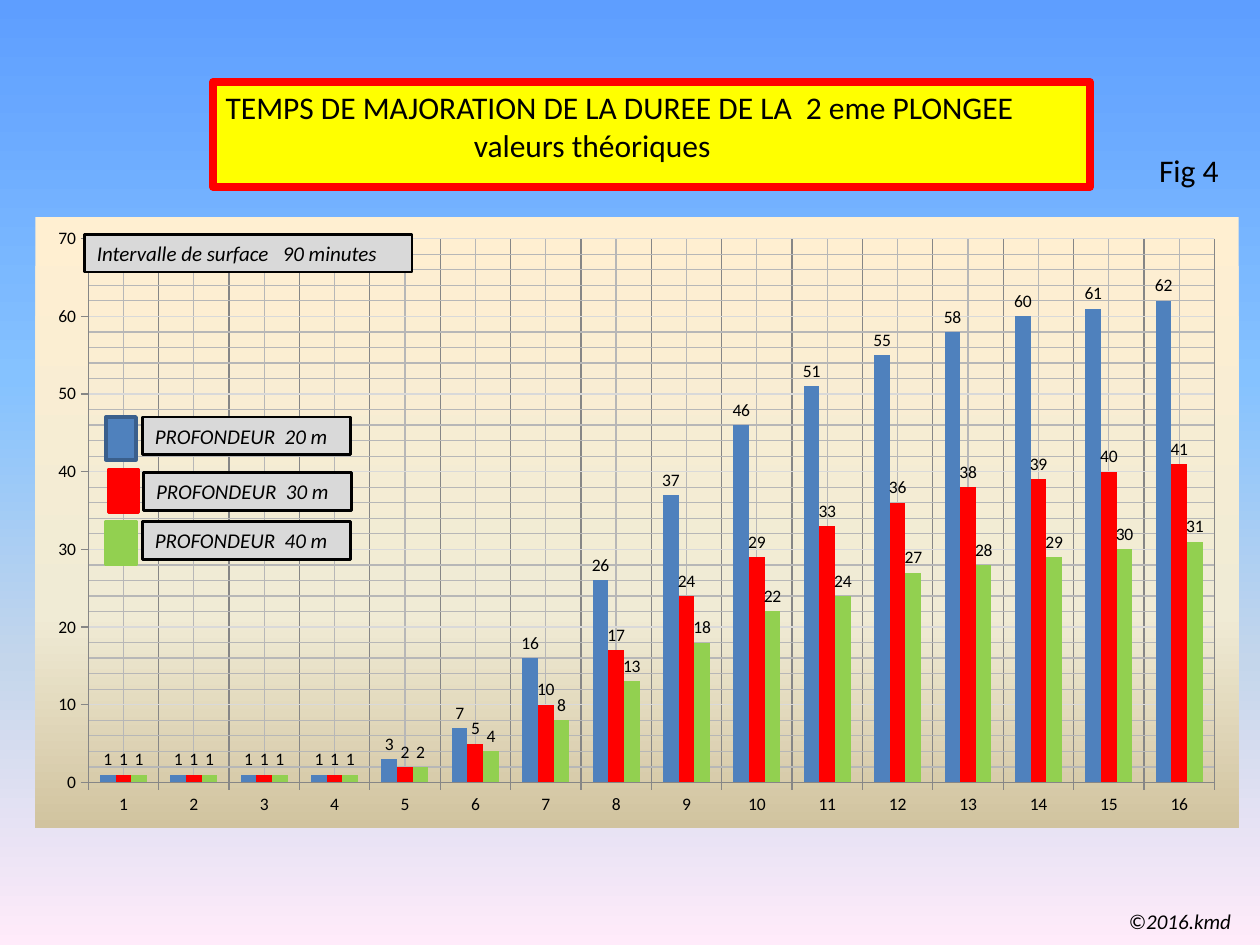
from dataclasses import dataclass

from lxml import etree
from pptx import Presentation
from pptx.chart.data import CategoryChartData
from pptx.dml.color import RGBColor
from pptx.enum import chart as chart_enum, shapes, text
from pptx.oxml import parse_xml
from pptx.oxml.ns import nsdecls, qn
from pptx.util import Inches, Pt


@dataclass(frozen=True)
class Theme:
    font: str = "Calibri"
    black: str = "000000"
    red: str = "FF0000"
    yellow: str = "FFFF00"
    label_fill: str = "D9D9D9"
    axis: str = "868686"
    minor_grid: str = "B7B7B7"
    background: tuple = ((0, "5E9EFF"), (40, "85C2FF"), (70, "C4D6EB"), (100, "FFEBFA"))
    chart_area: tuple = ((0, "FFEFD1"), (65, "F0EBD5"), (100, "D1C39F"))
    title_size: int = 18
    label_size: int = 12
    chart_size: int = 10


THEME = Theme()

# Depth in metres, bar colour, key outline, swatch position, label position, minutes
DEPTHS = [
    (20, "4F81BD", "3A5F8C", (0.84, 3.31), (1.13, 3.31),
     (1, 1, 1, 1, 3, 7, 16, 26, 37, 46, 51, 55, 58, 60, 61, 62)),
    (30, "FF0000", "FF0000", (0.86, 3.73), (1.14, 3.75),
     (1, 1, 1, 1, 2, 5, 10, 17, 24, 29, 33, 36, 38, 39, 40, 41)),
    (40, "92D050", "92D050", (0.84, 4.14), (1.13, 4.14),
     (1, 1, 1, 1, 2, 4, 8, 13, 18, 22, 24, 27, 28, 29, 30, 31)),
]


def color(value):
    return RGBColor.from_string(value)


def gradient(stops):
    """Vertical gradient fill element."""
    stop_xml = "".join(
        f'<a:gs pos="{position * 1000}"><a:srgbClr val="{value}"/></a:gs>'
        for position, value in stops)
    return parse_xml(
        f'<a:gradFill {nsdecls("a")} rotWithShape="1"><a:gsLst>{stop_xml}</a:gsLst>'
        '<a:lin ang="5400000" scaled="0"/></a:gradFill>')


def set_line(line, value, width):
    line.color.rgb = color(value)
    line.width = Pt(width)


def paint(shape, fill, line, width):
    shape.shadow.inherit = False
    shape.fill.solid()
    shape.fill.fore_color.rgb = color(fill)
    set_line(shape.line, line, width)


def write(shape, words, size, italic=False, wrap=True):
    frame = shape.text_frame
    frame.text = words
    frame.word_wrap = wrap
    frame.auto_size = text.MSO_AUTO_SIZE.SHAPE_TO_FIT_TEXT
    frame.vertical_anchor = text.MSO_ANCHOR.TOP
    for paragraph in frame.paragraphs:
        paragraph.alignment = text.PP_ALIGN.LEFT
        for run in paragraph.runs:
            run.font.name = THEME.font
            run.font.size = Pt(size)
            run.font.italic = italic
            run.font.color.rgb = color(THEME.black)


def add_box(slide, left, top, width, height, fill, line, line_width):
    shape = slide.shapes.add_shape(
        shapes.MSO_SHAPE.RECTANGLE,
        Inches(left), Inches(top), Inches(width), Inches(height))
    paint(shape, fill, line, line_width)
    return shape


def add_label(slide, left, top, width, words):
    label = add_box(slide, left, top, width, 0.3, THEME.label_fill, THEME.black, 1.5)
    write(label, words, THEME.label_size, italic=True)


def add_text(slide, left, top, width, height, words, size, italic=False, wrap=True):
    box = slide.shapes.add_textbox(
        Inches(left), Inches(top), Inches(width), Inches(height))
    write(box, words, size, italic, wrap)


def set_title(slide):
    title = slide.shapes.title
    title.left, title.top = Inches(1.69), Inches(0.65)
    title.width, title.height = Inches(6.96), Inches(0.71)
    paint(title, THEME.yellow, THEME.red, 4.5)
    write(title, "TEMPS DE MAJORATION DE LA DUREE DE LA  2 eme PLONGEE\nvaleurs théoriques",
          THEME.title_size)
    # The second line is indented under the first
    properties = title.text_frame.paragraphs[1]._p.get_or_add_pPr()
    properties.set("marL", str(Inches(1.97)))
    properties.set("indent", "0")


def format_axis(axis, major_color):
    axis.has_major_gridlines = axis.has_minor_gridlines = True
    set_line(axis.major_gridlines.format.line, major_color, 0.75)
    set_line(axis.format.line, THEME.axis, 0.75)
    axis.major_tick_mark = chart_enum.XL_TICK_MARK.OUTSIDE
    axis.minor_tick_mark = chart_enum.XL_TICK_MARK.NONE


def color_minor_grid(chart):
    for grid in chart.element.findall(".//" + qn("c:minorGridlines")):
        grid.append(parse_xml(
            f'<c:spPr {nsdecls("c", "a")}><a:ln w="{Pt(0.75)}"><a:solidFill>'
            f'<a:srgbClr val="{THEME.minor_grid}"/></a:solidFill></a:ln></c:spPr>'))


def set_plot_area(chart, x, y, width, height):
    """Fix the inner plot area, as fractions of the chart."""
    plot_area = chart.element.find(".//" + qn("c:plotArea"))
    for old in plot_area.findall(qn("c:layout")):
        plot_area.remove(old)
    layout = etree.Element(qn("c:layout"))
    manual = etree.SubElement(layout, qn("c:manualLayout"))
    for tag, value in (("layoutTarget", "inner"), ("xMode", "edge"), ("yMode", "edge"),
                       ("x", x), ("y", y), ("w", width), ("h", height)):
        etree.SubElement(manual, qn("c:" + tag)).set("val", str(value))
    plot_area.insert(0, layout)


def add_depth_chart(slide):
    data = CategoryChartData()
    data.categories = [str(number) for number in range(1, 17)]
    for index, depth in enumerate(DEPTHS, start=1):
        data.add_series(f"Series {index}", depth[-1])
    chart = slide.shapes.add_chart(
        chart_enum.XL_CHART_TYPE.COLUMN_CLUSTERED,
        Inches(0.28), Inches(1.72), Inches(9.55), Inches(4.85), data).chart
    chart.has_title = chart.has_legend = False
    chart.font.name = THEME.font
    chart.font.size = Pt(THEME.chart_size)
    chart.font.color.rgb = color(THEME.black)

    # Axes and grid
    format_axis(chart.category_axis, THEME.axis)
    format_axis(chart.value_axis, THEME.label_fill)
    color_minor_grid(chart)
    chart.value_axis.minimum_scale, chart.value_axis.maximum_scale = 0, 70
    chart.value_axis.major_unit, chart.value_axis.minor_unit = 10, 2

    # Bars and their values
    plot = chart.plots[0]
    plot.vary_by_categories = False
    plot.gap_width, plot.overlap = 150, 0
    for series, depth in zip(plot.series, DEPTHS):
        series.format.fill.solid()
        series.format.fill.fore_color.rgb = color(depth[1])
        series.data_labels.show_value = True
        series.data_labels.position = chart_enum.XL_LABEL_POSITION.OUTSIDE_END

    # Chart area
    set_plot_area(chart, 0.044, 0.036, 0.936, 0.89)
    area = parse_xml(f'<c:spPr {nsdecls("c", "a")}><a:ln><a:noFill/></a:ln></c:spPr>')
    area.insert(0, gradient(THEME.chart_area))
    chart.element.find(qn("c:chart")).addnext(area)


def set_background(slide):
    slide.background.fill.solid()
    solid = slide.element.find(".//" + qn("p:bgPr")).find(qn("a:solidFill"))
    solid.getparent().replace(solid, gradient(THEME.background))


def main():
    presentation = Presentation()
    presentation.slide_width, presentation.slide_height = Inches(10), Inches(7.5)
    slide = presentation.slides.add_slide(presentation.slide_layouts[5])
    set_background(slide)
    set_title(slide)
    add_depth_chart(slide)
    # Colour key
    for metres, fill, line, swatch, label, _ in DEPTHS:
        add_label(slide, *label, 1.65, f"PROFONDEUR  {metres} m")
        add_box(slide, *swatch, 0.24, 0.34, fill, line, 2)
    # Captions
    add_label(slide, 0.67, 1.86, 2.6, "Intervalle de surface   90 minutes")
    add_text(slide, 9.1, 1.15, 0.79, 0.4, "Fig 4", THEME.title_size)
    add_text(slide, 8.86, 7.16, 1.02, 0.3, "©2016.kmd", THEME.label_size,
             italic=True, wrap=False)
    presentation.save("out.pptx")


if __name__ == "__main__":
    main()
